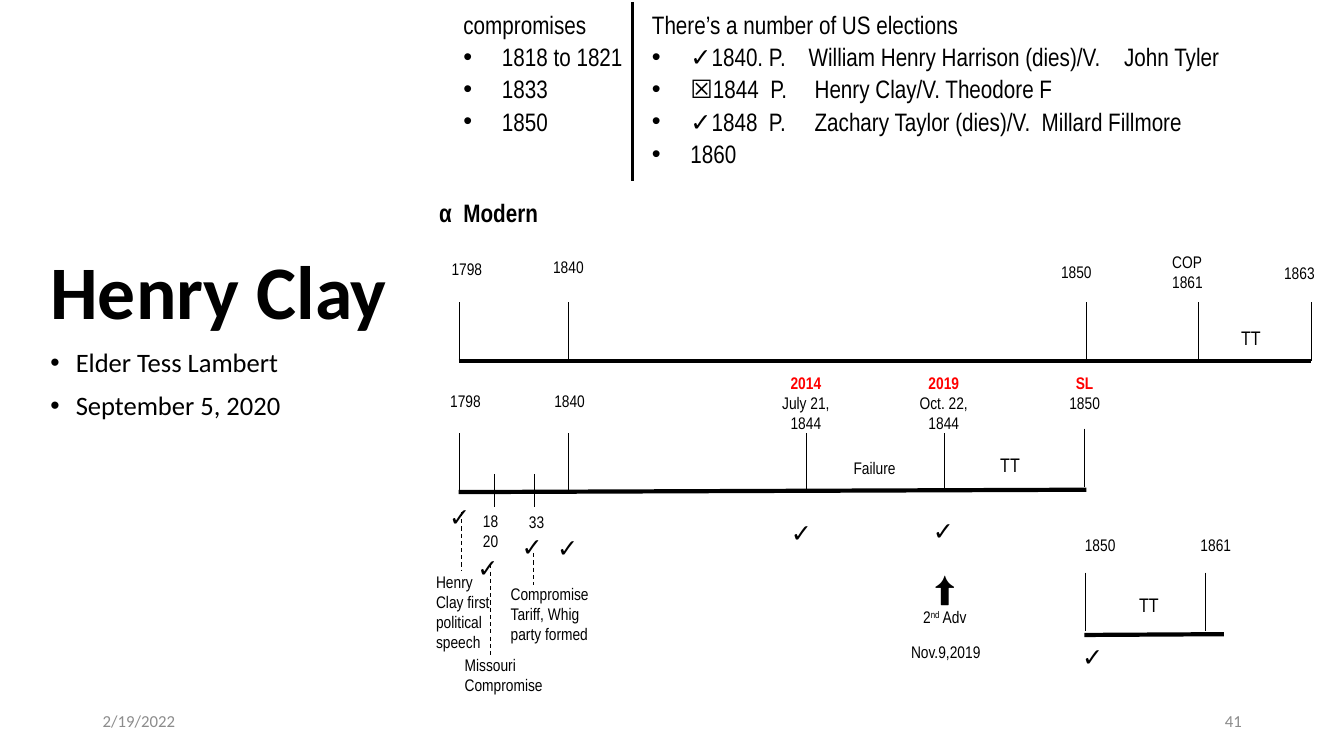
"""Builds the Henry Clay slide: compromises, elections and three timelines."""
from lxml import etree
from pptx import Presentation
from pptx.dml.color import RGBColor
from pptx.enum.dml import MSO_LINE
from pptx.enum.shapes import MSO_CONNECTOR
from pptx.enum.text import MSO_ANCHOR, PP_ALIGN
from pptx.oxml.ns import qn
from pptx.util import Cm, Pt

LEFT, CENTER, RIGHT = PP_ALIGN.LEFT, PP_ALIGN.CENTER, PP_ALIGN.RIGHT
MIDDLE = MSO_ANCHOR.MIDDLE
DASH = MSO_LINE.DASH
STRAIGHT = MSO_CONNECTOR.STRAIGHT
COLORS = {"ink": "000000", "accent": "FF0000", "footer": "8C8C8C"}
NARROW, SANS = "Arial Narrow", "Calibri"

deck = Presentation()
deck.slide_width, deck.slide_height = Cm(33.87), Cm(19.05)
page = deck.slides.add_slide(deck.slide_layouts[6])


def add_text(lines, left, top, width, height, size=12, align=LEFT,
             font=NARROW, color="ink", bold=False):
    box = page.shapes.add_textbox(Cm(left), Cm(top), Cm(width), Cm(height))
    frame = box.text_frame
    frame.word_wrap = True
    frame.text = lines
    for para in frame.paragraphs:
        para.alignment = align
        para.font.name, para.font.size, para.font.bold = font, Pt(size), bold
        para.font.color.rgb = RGBColor.from_string(COLORS[color])
    return frame


def add_line(x1, y1, x2, y2, weight=0.75):
    line = page.shapes.add_connector(STRAIGHT, Cm(x1), Cm(y1), Cm(x2), Cm(y2))
    line.line.color.rgb = RGBColor.from_string(COLORS["ink"])
    line.line.width = Pt(weight)
    etree.SubElement(line._element.spPr, qn("a:effectLst"))
    return line


for footer, left, align in (("2/19/2022", 2.34, LEFT), ("41", 23.93, RIGHT)):
    frame = add_text(footer, left, 17.65, 7.62, 1.02, 12, align, SANS, "footer")
    frame.vertical_anchor = MIDDLE

title = add_text("Henry Clay", 1.02, 6.17, 9.02, 2.51, 54, font=SANS, bold=True)
title.vertical_anchor = MIDDLE
title.paragraphs[0].line_spacing = 0.9

details = add_text("Elder Tess Lambert\nSeptember 5, 2020", 1.02, 8.69, 6.45, 2.11,
                   19, font=SANS)
compromises = add_text("compromises\n1818 to 1821\n1833\n1850",
                       11.43, 0.05, 5.72, 4.32, 18)
elections = add_text(
    "There’s a number of US elections\n"
    "✓1840. P.\tWilliam Henry Harrison (dies)/V.\tJohn Tyler\n"
    "☒1844  P.\tHenry Clay/V. Theodore F\n"
    "✓1848  P.\tZachary Taylor (dies)/V.  Millard Fillmore\n"
    "1860", 16.18, 0.05, 16.94, 4.32, 18)

for frame, first, indent, spacing, before in (
        (details, 0, 0.64, 0.9, 10),
        (compromises, 1, 0.97, 1.07, 0),
        (elections, 1, 0.97, 1.07, 0)):
    for para in frame.paragraphs:
        para.line_spacing, para.space_before = spacing, Pt(before)
    for para in frame.paragraphs[first:]:
        properties = para._p.get_or_add_pPr()
        properties.set("marL", str(Cm(indent)))
        properties.set("indent", str(-Cm(indent)))
        etree.SubElement(properties, qn("a:buFont"), typeface="Arial")
        etree.SubElement(properties, qn("a:buChar"), char="•")

for para, stops in zip(elections.paragraphs[1:4], ((3.95, 11.9), (4.1,), (4.1,))):
    tabs = etree.Element(qn("a:tabLst"))
    for stop in stops:
        etree.SubElement(tabs, qn("a:tab"), pos=str(Cm(stop)), algn="l")
    para._p.pPr.find(qn("a:buChar")).addnext(tabs)

add_line(15.95, 0.05, 15.95, 4.57, 2.25)

for x1, y1, x2, y2 in ((11.56, 9.09, 33.05, 9.09),
                       (11.56, 12.4, 27.38, 12.34),
                       (27.33, 16, 30.84, 15.98)):
    add_line(x1, y1, x2, y2, 3)

for top, length, marks in (
        (7.62, 1.47, (11.58, 14.33, 27.38, 30.2, 33.05)),
        (10.92, 1.47, (11.58, 14.33, 20.32, 23.8)),
        (10.8, 1.47, (27.33,)),
        (11.94, 0.84, (12.45, 13.46)),
        (14.43, 1.47, (27.36, 30.38))):
    for x in marks:
        add_line(x, top, x, top + length)

for x, top, bottom in ((11.63, 12.9, 14.38), (12.37, 14.22, 16.56), (13.44, 13.94, 14.73)):
    add_line(x, top, x, bottom).line.dash_style = DASH

add_text("α  Modern", 10.82, 4.85, 4.6, 1.02, 18, bold=True)

for label, left, top, width, height in (
        ("1798", 11.13, 6.4, 1.7, 0.76),
        ("1850", 26.49, 6.48, 1.63, 0.76),
        ("COP\n1861", 29.29, 6.22, 1.63, 1.27),
        ("1863", 32.11, 6.5, 1.57, 0.76),
        ("Henry Clay first political speech", 10.74, 14.27, 2.13, 2.31),
        ("Missouri\nCompromise", 11.46, 16.38, 2.77, 1.27),
        ("Compromise\nTariff, Whig party formed", 12.62, 14.58, 2.77, 1.8)):
    add_text(label, left, top, width, height)

for label, left, top, width, height in (
        ("1840", 13.51, 6.35, 1.63, 0.76),
        ("1798", 11.02, 9.73, 1.42, 0.76),
        ("1840", 13.54, 9.73, 1.63, 0.76),
        ("18\n20", 11.68, 12.75, 1.37, 1.27),
        ("33", 12.85, 12.78, 1.35, 0.76),
        ("Failure", 21.01, 11.4, 2.06, 0.76),
        ("1850", 26.62, 13.36, 2.21, 0.76),
        ("1861", 29.79, 13.36, 1.7, 0.76),
        ("Nov.9,2019", 22.63, 16.05, 2.41, 0.76)):
    add_text(label, left, top, width, height, align=CENTER)

for label, left, width, height in (
        ("2014\nJuly 21,\n1844", 19.28, 2.06, 1.8),
        ("2019\nOct. 22,\n1844", 22.58, 2.41, 1.8),
        ("SL\n1850", 26.52, 1.63, 1.27)):
    heading = add_text(label, left, 9.27, width, height, align=CENTER).paragraphs[0]
    heading.font.bold = True
    heading.font.color.rgb = RGBColor.from_string(COLORS["accent"])

for left, top in ((30.71, 8.1), (24.64, 11.3), (28.14, 14.81)):
    add_text("TT", left, top, 1.63, 0.86, 14, CENTER)

for left, top in ((11.05, 12.5), (11.76, 13.79), (12.88, 13.26), (13.77, 13.28),
                  (19.66, 12.9), (23.24, 12.85), (27, 16.03)):
    add_text("✓", left, top, 1.07, 1.02, 18, CENTER, bold=True)

advent = add_text("⬆\n2", 22.78, 14.15, 2.06, 1.8, align=CENTER)
advent.paragraphs[0].font.size = Pt(24)
for part, baseline in (("nd", "30000"), (" Adv", "0")):
    span = advent.paragraphs[1].add_run()
    span.text = part
    span._r.get_or_add_rPr().set("baseline", baseline)

deck.save("out.pptx")
